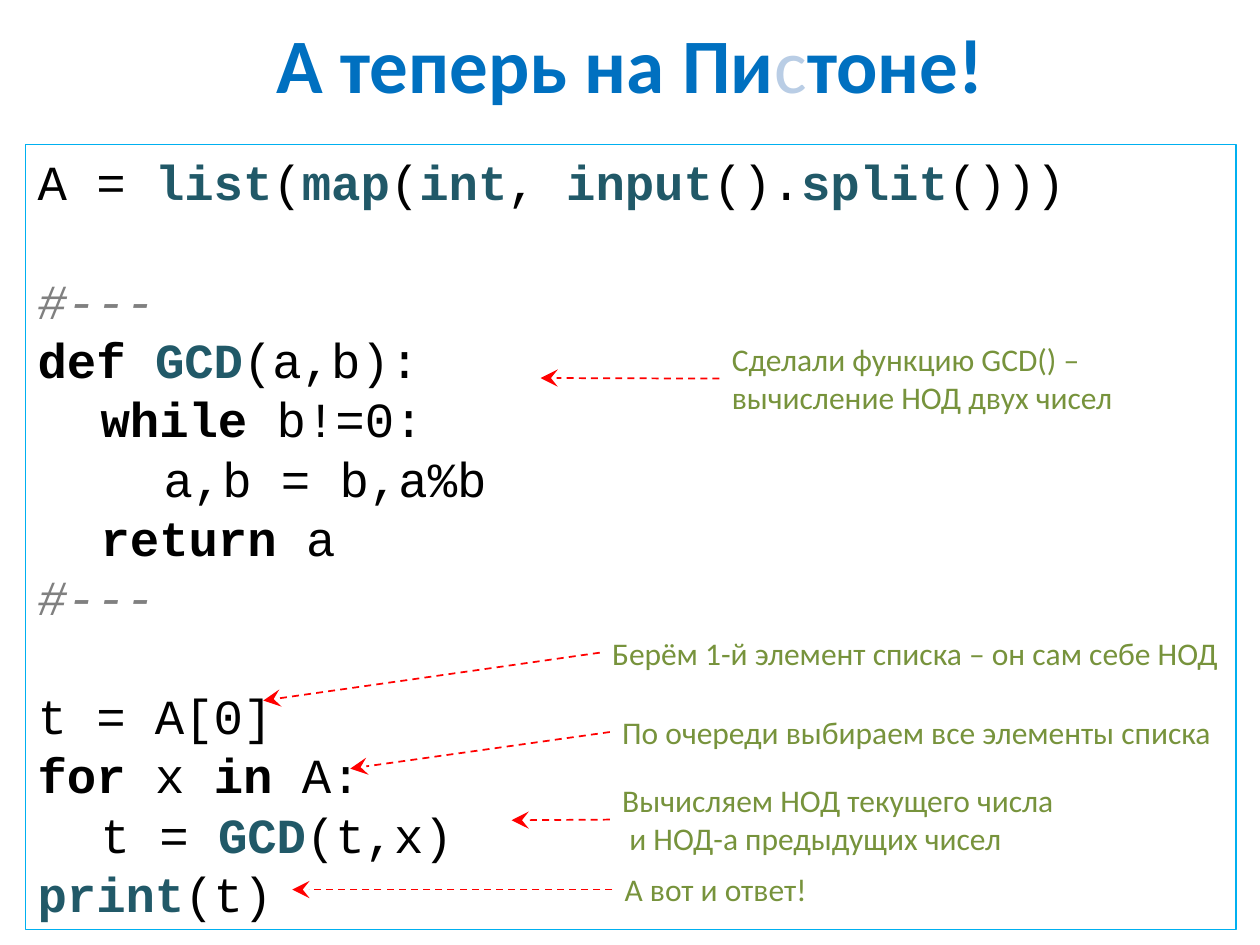
from dataclasses import dataclass

from lxml import etree
from pptx import Presentation
from pptx import util as u
from pptx.dml.color import RGBColor
from pptx.enum import dml, shapes, text
from pptx.oxml import ns


@dataclass(frozen=True)
class Theme:
    heading: str = "0070C0"
    pale: str = "B9CDE5"
    frame: str = "00B0F0"
    arrow: str = "FF0000"
    note: str = "77933C"
    body_font: str = "Calibri"
    code_font: str = "Courier New"
    title_size: int = 44
    code_size: int = 28
    note_size: int = 18
    code_leading: float = 33.9


THEME = Theme()
# style: colour, bold, italic
STYLES = {
    "plain": ("000000", False, False),
    "keyword": ("000000", True, False),
    "name": ("215968", True, False),
    "comment": ("808080", False, True),
    "heading": (THEME.heading, True, False),
    "accent": (THEME.pale, False, False),
}
P, K, N, C = "plain", "keyword", "name", "comment"

TITLE = [("А теперь на Пи", "heading"), ("с", "accent"), ("тоне!", "heading")]
# Blocks of code lines, one empty line apart
CODE = [
    [
        [("A = ", P), ("list", N), ("(", P), ("map", N), ("(", P), ("int", N),
         (", ", P), ("input", N), ("().", P), ("split", N), ("()))", P)],
    ],
    [
        [("#---", C)],
        [("def ", K), ("GCD", N), ("(a,b):", P)],
        [("\twhile", K), (" b!=0:", P)],
        [("\t\ta,b = b,a%b", P)],
        [("\treturn ", K), ("a", P)],
        [("#---", C)],
    ],
    [
        [("t = A[0]", P)],
        [("for", K), (" x ", P), ("in", K), (" A:", P)],
        [("\tt = ", P), ("GCD", N), ("(t,x)", P)],
        [("print", N), ("(t)", P)],
    ],
]
# Note text, (left, top, width, height), arrow tip; all in inches
NOTES = [
    ("Сделали функцию GCD() – вычисление НОД двух чисел",
     (5.71, 2.65, 4.09, 0.71), (4.29, 3.0)),
    ("Берём 1-й элемент списка – он сам себе НОД",
     (4.76, 4.98, 5.04, 0.4), (2.09, 5.56)),
    ("По очереди выбираем все элементы списка",
     (4.84, 5.61, 4.96, 0.4), (2.78, 6.1)),
    ("Вычисляем НОД текущего числа\v и НОД-а предыдущих чисел",
     (4.84, 6.15, 3.7, 0.71), (4.06, 6.51)),
    ("А вот и ответ!",
     (4.86, 6.86, 1.83, 0.4), (2.32, 7.06)),
]


def rgb(code):
    return RGBColor.from_string(code)


def inches(*values):
    return [u.Inches(value) for value in values]


def add_styled_runs(paragraph, pieces):
    for words, style in pieces:
        run = paragraph.add_run()
        run.text = words
        colour, run.font.bold, run.font.italic = STYLES[style]
        run.font.color.rgb = rgb(colour)


def set_font(paragraph, name, size):
    paragraph.font.name = name
    paragraph.font.size = u.Pt(size)


def add_title(slide):
    title = slide.shapes.title
    title.left, title.top, title.width, title.height = inches(0, 0, 10, 1)
    title.text_frame.vertical_anchor = text.MSO_ANCHOR.MIDDLE
    paragraph = title.text_frame.paragraphs[0]
    paragraph.alignment = text.PP_ALIGN.CENTER
    set_font(paragraph, THEME.body_font, THEME.title_size)
    add_styled_runs(paragraph, TITLE)


def add_code(slide):
    listing = slide.shapes.add_shape(
        shapes.MSO_SHAPE.RECTANGLE, *inches(0.2, 1.15, 9.61, 6.23))
    listing.shadow.inherit = False
    listing.fill.background()
    listing.line.color.rgb = rgb(THEME.frame)
    listing.line.width = u.Pt(0.75)
    frame = listing.text_frame
    frame.word_wrap = True
    frame.vertical_anchor = text.MSO_ANCHOR.TOP
    for block_number, block in enumerate(CODE):
        for line_number, pieces in enumerate(block):
            first = block_number == line_number == 0
            paragraph = frame.paragraphs[0] if first else frame.add_paragraph()
            paragraph.alignment = text.PP_ALIGN.LEFT
            paragraph.line_spacing = u.Pt(THEME.code_leading)
            if line_number == 0 and not first:
                paragraph.space_before = u.Pt(THEME.code_leading)
            set_font(paragraph, THEME.code_font, THEME.code_size)
            add_styled_runs(paragraph, pieces)


def add_note(slide, words, box, tip):
    note = slide.shapes.add_textbox(*inches(*box))
    note.text_frame.word_wrap = True
    note.text_frame.text = words
    paragraph = note.text_frame.paragraphs[0]
    set_font(paragraph, THEME.body_font, THEME.note_size)
    paragraph.font.color.rgb = rgb(THEME.note)

    left, top, _, height = box
    arrow = slide.shapes.add_connector(
        shapes.MSO_CONNECTOR.STRAIGHT, *inches(left, top + height / 2, *tip))
    arrow.begin_connect(note, 1)
    arrow.line.color.rgb = rgb(THEME.arrow)
    arrow.line.width = u.Pt(1)
    arrow.line.dash_style = dml.MSO_LINE.DASH
    etree.SubElement(arrow.line._get_or_add_ln(), ns.qn("a:tailEnd"),
                     type="stealth", w="lg", len="lg")
    etree.SubElement(arrow._element.spPr, ns.qn("a:effectLst"))


def main():
    deck = Presentation()
    deck.slide_width, deck.slide_height = inches(10, 7.5)
    slide = deck.slides.add_slide(deck.slide_layouts[5])
    add_title(slide)
    add_code(slide)
    for note in NOTES:
        add_note(slide, *note)
    deck.save("out.pptx")


if __name__ == "__main__":
    main()
